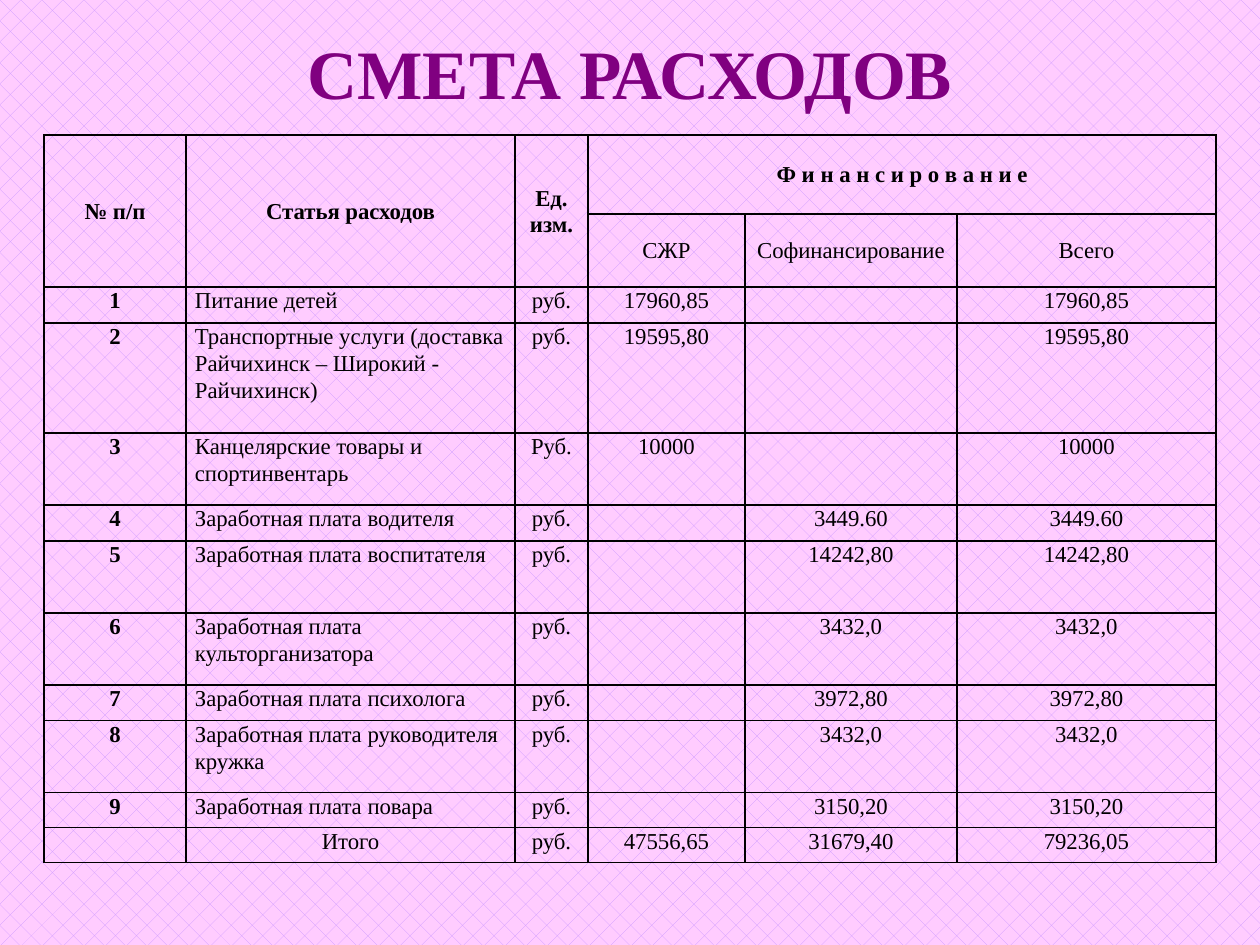
import pptx
import pptx.util
import pptx.dml.color
import pptx.enum.dml
import pptx.enum.text
import pptx.oxml
import pptx.oxml.ns

PX = 914400 // 126
FONT = "Times New Roman"
COLORS = {"title": "800080", "text": "000000", "line": "000000",
          "mesh": "CC99FF", "back": "FFCCFF"}
NS = pptx.oxml.ns.nsdecls("a")
Pt = pptx.util.Pt
ALIGN = pptx.enum.text.PP_ALIGN
ANCHOR = pptx.enum.text.MSO_ANCHOR


def color(name):
    return pptx.dml.color.RGBColor.from_string(COLORS[name])


def write(para, text, size, hue, bold):
    run = para.add_run()
    run.text = text
    run.font.name = FONT
    run.font.size = Pt(size)
    run.font.bold = bold
    run.font.color.rgb = color(hue)


deck = pptx.Presentation()
deck.slide_width, deck.slide_height = 1260 * PX, 945 * PX
slide = deck.slides.add_slide(deck.slide_layouts[5])

fill = slide.background.fill
fill.patterned()
fill.pattern = pptx.enum.dml.MSO_PATTERN.DOTTED_DIAMOND
fill.fore_color.rgb = color("mesh")
fill.back_color.rgb = color("back")

title = slide.shapes.title
title.left, title.top, title.width, title.height = [n * PX for n in (63, 38, 1134, 68)]
frame = title.text_frame
frame.auto_size = pptx.enum.text.MSO_AUTO_SIZE.NONE
frame.vertical_anchor = ANCHOR.MIDDLE
frame.paragraphs[0].alignment = ALIGN.CENTER
write(frame.paragraphs[0], "СМЕТА РАСХОДОВ", 39.6, "title", True)

rows = [
    ("№ п/п", "Статья расходов", "Ед. изм.", "Ф и н а н с и р о в а н и е", "", ""),
    ("", "", "", "СЖР", "Софинансирование", "Всего"),
    ("1", "Питание детей", "руб.", "17960,85", "", "17960,85"),
    ("2", "Транспортные услуги (доставка Райчихинск – Широкий - Райчихинск)",
     "руб.", "19595,80", "", "19595,80"),
    ("3", "Канцелярские товары и спортинвентарь", "Руб.", "10000", "", "10000"),
    ("4", "Заработная плата водителя", "руб.", "", "3449.60", "3449.60"),
    ("5", "Заработная плата воспитателя", "руб.", "", "14242,80", "14242,80"),
    ("6", "Заработная плата культорганизатора", "руб.", "", "3432,0", "3432,0"),
    ("7", "Заработная плата психолога", "руб.", "", "3972,80", "3972,80"),
    ("8", "Заработная плата руководителя кружка", "руб.", "", "3432,0", "3432,0"),
    ("9", "Заработная плата повара", "руб.", "", "3150,20", "3150,20"),
    ("", "Итого", "руб.", "47556,65", "31679,40", "79236,05"),
]
widths = [142, 329, 73, 157, 212, 259]
heights = [79, 73, 36, 110, 72, 36, 72, 72, 36, 72, 35, 35]
last = len(rows) - 1

table = slide.shapes.add_table(
    len(rows), len(widths), 44 * PX, 135 * PX,
    sum(widths) * PX, sum(heights) * PX).table
table.first_row = table.horz_banding = False
for col, wide in zip(table.columns, widths):
    col.width = wide * PX
for row, high in zip(table.rows, heights):
    row.height = high * PX

for r, texts in enumerate(rows):
    for c, text in enumerate(texts):
        cell = table.cell(r, c)
        cell.margin_left = cell.margin_right = 9 * PX
        cell.margin_top = cell.margin_bottom = 0
        cell.vertical_anchor = ANCHOR.MIDDLE if r < 2 else ANCHOR.TOP
        props = cell._tc.get_or_add_tcPr()
        for side in "LRTB":
            props.append(pptx.oxml.parse_xml(
                f'<a:ln{side} {NS} w="12700"><a:solidFill>'
                f'<a:srgbClr val="{COLORS["line"]}"/></a:solidFill></a:ln{side}>'))
        cell.fill.background()

        para = cell.text_frame.paragraphs[0]
        para.line_spacing = 1.07
        para.space_after = Pt(8)
        item = c == 1 and 2 <= r < last
        para.alignment = ALIGN.LEFT if item else ALIGN.CENTER
        if text:
            write(para, text, 13, "text", r == 0 or c == 0)
        else:
            # keeps an empty cell from stretching its row
            para._p.append(pptx.oxml.parse_xml(f'<a:endParaRPr {NS} sz="1300"/>'))

# the item on row 5 is the only justified one
table.cell(6, 1).text_frame.paragraphs[0].alignment = ALIGN.JUSTIFY

for c in range(3):
    table.cell(0, c).merge(table.cell(1, c))
table.cell(0, 3).merge(table.cell(0, 5))

deck.save("out.pptx")
